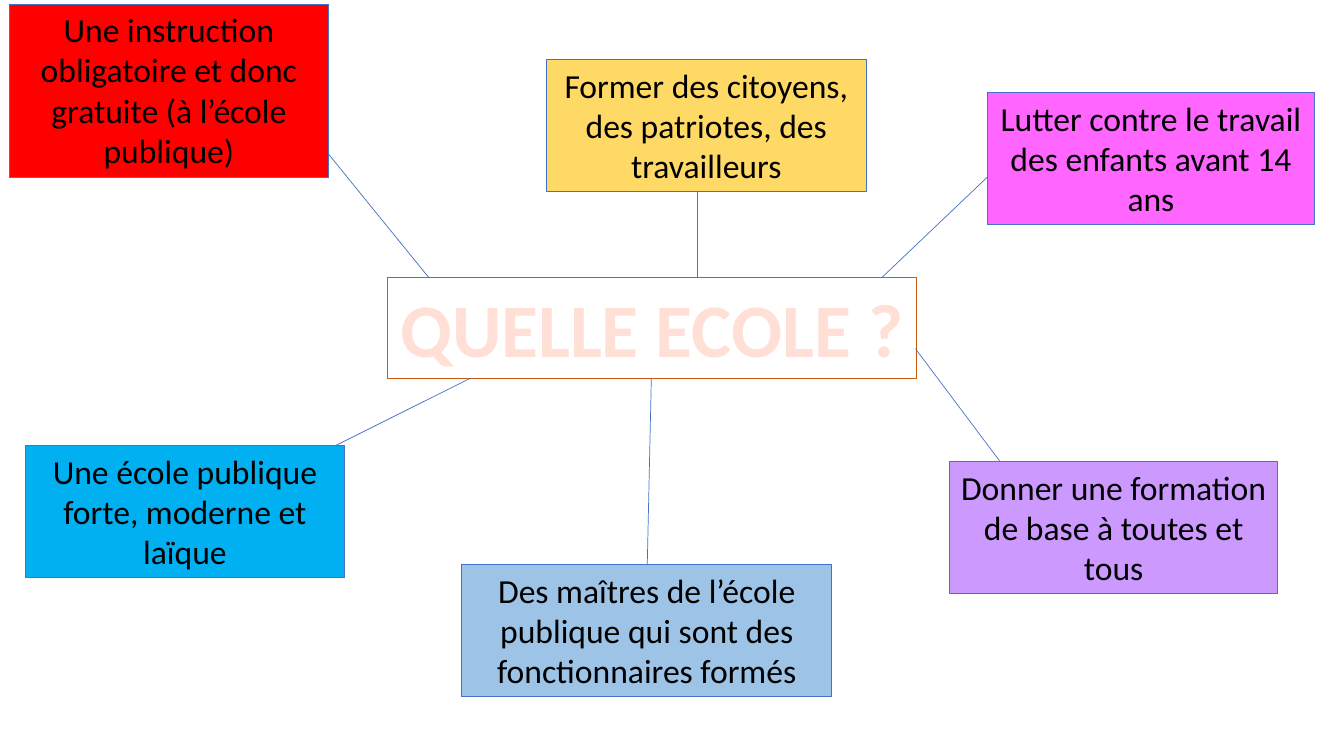
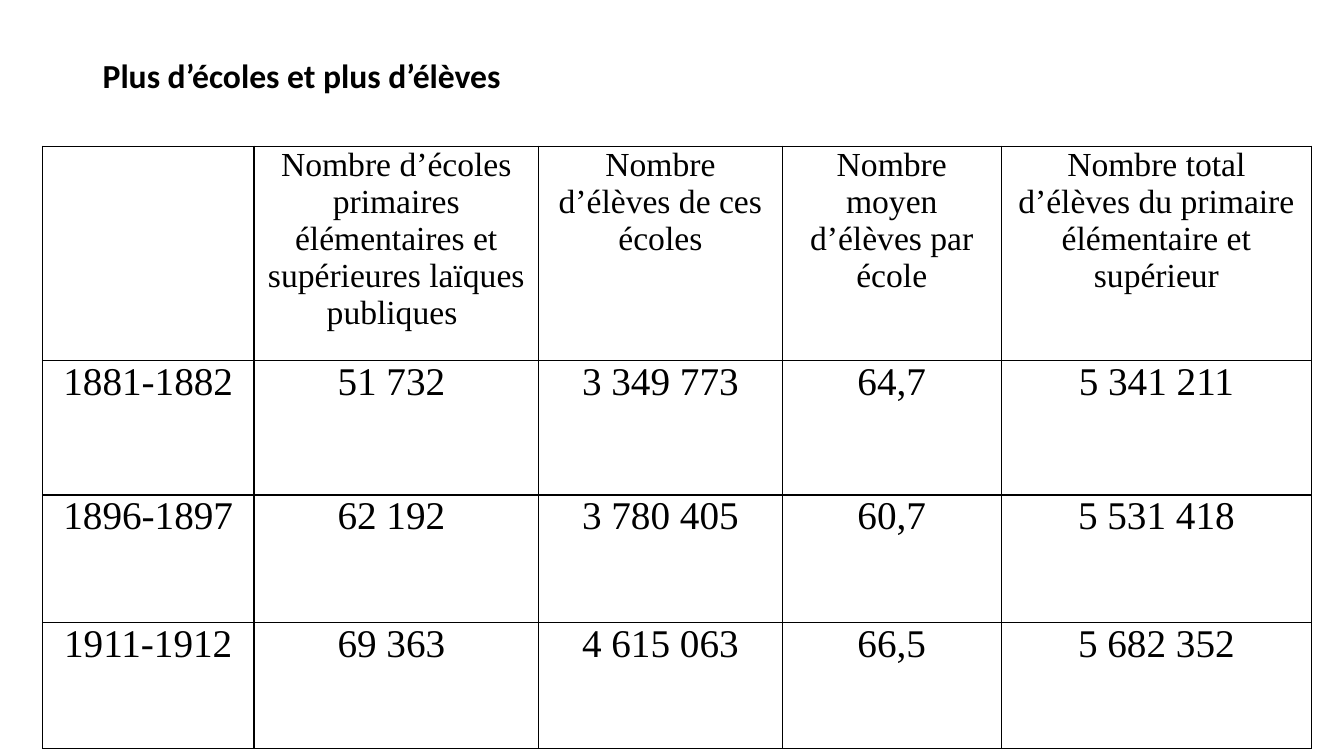
from lxml import etree
from pptx import Presentation
from pptx.dml.color import RGBColor
from pptx.enum import shapes, text
from pptx.oxml import parse_xml
from pptx.oxml.ns import nsdecls, qn
from pptx.util import Inches, Pt

BLACK, BLUE, ORANGE = "000000", "4472C4", "C55A11"
SANS, SERIF = "Calibri", "Times New Roman"
BODY_SIZE, FIGURE_SIZE, HEADLINE_SIZE = 24, 28, 54

# text, fill, left, top, width, height
IDEAS = [
    ("Une école publique forte, moderne et laïque", "00B0F0", 0.25, 4.42, 3.17, 1.31),
    ("Lutter contre le travail des enfants avant 14 ans", "FF66FF", 9.79, 0.92, 3.25, 1.31),
    ("Former des citoyens, des patriotes, des travailleurs", "FFD966", 5.42, 0.59, 3.17, 1.31),
    ("Des maîtres de l’école publique qui sont des fonctionnaires formés",
     "9DC3E6", 4.58, 5.6, 3.67, 1.31),
    ("Donner une formation de base à toutes et tous", "CC99FF", 9.42, 4.58, 3.25, 1.31),
    ("Une instruction obligatoire et donc gratuite (à l’école publique)",
     "FF0000", 0.09, 0.04, 3.17, 1.72),
]
# from x, from y, to x, to y
BRANCHES = [
    (4.25, 2.75, 3.17, 1.42),
    (6.92, 2.75, 6.92, 1.9),
    (8.75, 2.75, 9.79, 1.76),
    (4.67, 3.75, 3.33, 4.42),
    (6.46, 3.76, 6.42, 5.6),
    (9.08, 3.46, 9.92, 4.58),
]

COLUMN_WIDTHS = [2.1, 2.82, 2.42, 2.17, 3.08]
ROW_HEIGHTS = [2.13, 1.33, 1.27, 1.25]
SCHOOL_FIGURES = [
    ["", "Nombre d’écoles primaires élémentaires et supérieures laïques publiques ",
     "Nombre d’élèves de ces écoles", "Nombre moyen d’élèves par école",
     "Nombre total d’élèves du primaire élémentaire et supérieur"],
    ["1881-1882", "51 732 ", "3 349 773", "64,7", "5 341 211"],
    ["1896-1897", "62 192 ", "3 780 405", "60,7", "5 531 418"],
    ["1911-1912", "69 363 ", "4 615 063", "66,5", "5 682 352"],
]


def rgb(color):
    return RGBColor.from_string(color)


def add_run(p, content, size=BODY_SIZE, font=SANS, bold=False, color=BLACK):
    r = p.add_run()
    r.text = content
    r.font.size = Pt(size)
    r.font.name = font
    r.font.bold = bold
    r.font.color.rgb = rgb(color)
    return r


def fit_to_text(tf, wrap=True):
    tf.word_wrap = wrap
    tf.auto_size = text.MSO_AUTO_SIZE.SHAPE_TO_FIT_TEXT
    tf.vertical_anchor = text.MSO_ANCHOR.TOP


def add_box(slide, box, line, fill=None, wrap=True):
    """Add an outlined rectangle and return its centred paragraph."""
    sp = slide.shapes.add_shape(shapes.MSO_SHAPE.RECTANGLE, *map(Inches, box))
    sp.shadow.inherit = False
    if fill:
        sp.fill.solid()
        sp.fill.fore_color.rgb = rgb(fill)
    else:
        sp.fill.background()
    sp.line.color.rgb = rgb(line)
    sp.line.width = Pt(0.75)
    fit_to_text(sp.text_frame, wrap)
    p = sp.text_frame.paragraphs[0]
    p.alignment = text.PP_ALIGN.CENTER
    return p


def add_branch(slide, ends):
    line = slide.shapes.add_connector(shapes.MSO_CONNECTOR.STRAIGHT, *map(Inches, ends))
    line.line.color.rgb = rgb(BLUE)
    line.line.width = Pt(0.5)
    etree.SubElement(line._element.spPr, qn("a:effectLst"))


def style_headline(r):
    """Give a run a vertical three-stop gradient and a coloured outline."""
    stops = "".join(
        f'<a:gs pos="{pos * 1000}"><a:srgbClr val="{color}"/></a:gs>'
        for pos, color in [(10, "FFF5F2"), (60, "FFDFD6"), (100, "FFA787")])
    r_pr = r.font._element
    r_pr.replace(r_pr.find(qn("a:solidFill")), parse_xml(
        f'<a:gradFill {nsdecls("a")}><a:gsLst>{stops}</a:gsLst>'
        '<a:lin ang="5400000" scaled="0"/></a:gradFill>'))
    r_pr.insert(0, parse_xml(
        f'<a:ln {nsdecls("a")} w="{Pt(1.93)}"><a:solidFill>'
        '<a:srgbClr val="FF6E0B"/></a:solidFill></a:ln>'))


def add_borders(cell):
    tc_pr = cell._tc.get_or_add_tcPr()
    for side in "LRTB":
        tc_pr.append(parse_xml(
            f'<a:ln{side} {nsdecls("a")} w="{Pt(1)}"><a:solidFill>'
            f'<a:srgbClr val="{BLACK}"/></a:solidFill></a:ln{side}>'))


def fill_cell(cell, content, size):
    add_borders(cell)
    cell.fill.background()
    cell.margin_left = cell.margin_right = Inches(0.07)
    cell.margin_top = cell.margin_bottom = 0
    if content:
        p = cell.text_frame.paragraphs[0]
        p.alignment = text.PP_ALIGN.CENTER
        add_run(p, content, size, SERIF)


def add_figures_table(slide, left, top):
    table = slide.shapes.add_table(
        len(ROW_HEIGHTS), len(COLUMN_WIDTHS), Inches(left), Inches(top),
        Inches(sum(COLUMN_WIDTHS)), Inches(sum(ROW_HEIGHTS))).table
    table.first_row = table.horz_banding = False
    for column, width in zip(table.columns, COLUMN_WIDTHS):
        column.width = Inches(width)
    for i, (row, height) in enumerate(zip(table.rows, ROW_HEIGHTS)):
        row.height = Inches(height)
        size = FIGURE_SIZE if i else BODY_SIZE
        for cell, content in zip(row.cells, SCHOOL_FIGURES[i]):
            fill_cell(cell, content, size)


def add_title(slide, content):
    tf = slide.shapes.add_textbox(*map(Inches, (0.92, 0.5, 9.33, 0.5))).text_frame
    fit_to_text(tf)
    add_run(tf.paragraphs[0], content, bold=True)


def build_mind_map(slide):
    p = add_box(slide, (3.84, 2.75, 5.25, 1.01), ORANGE, wrap=False)
    style_headline(add_run(p, "QUELLE ECOLE ?", HEADLINE_SIZE, bold=True))
    for ends in BRANCHES:
        add_branch(slide, ends)
    for content, fill, *box in IDEAS:
        add_run(add_box(slide, box, BLUE, fill), content)


def build_school_figures(slide):
    add_figures_table(slide, 0.42, 1.45)
    add_title(slide, "Plus d’écoles et plus d’élèves")


def main():
    prs = Presentation()
    prs.slide_width, prs.slide_height = Inches(13.33), Inches(7.5)
    for build in (build_mind_map, build_school_figures):
        build(prs.slides.add_slide(prs.slide_layouts[6]))
    prs.save("out.pptx")


if __name__ == "__main__":
    main()
